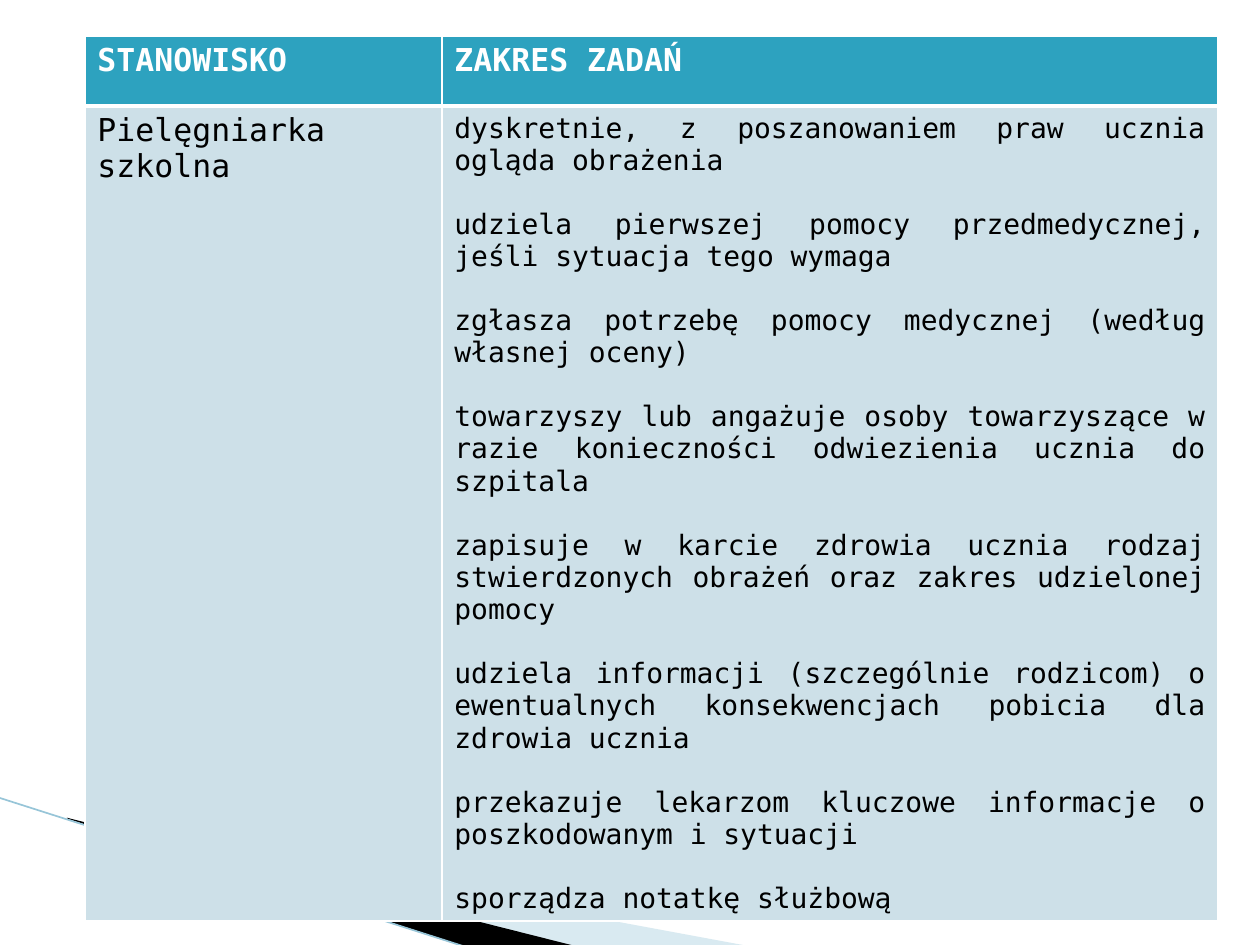
from pptx import Presentation
from pptx.dml.color import RGBColor
from pptx.enum.shapes import MSO_CONNECTOR
from pptx.enum.text import PP_ALIGN
from pptx.oxml.ns import qn
from pptx.util import Pt
from lxml.etree import SubElement

HUES = {"head": "2DA2BF", "body": "CDE0E8", "pale": "A0CBDC",
        "line": "97C5D8", "white": "FFFFFF", "black": "000000"}
FONT = "DejaVu Sans Mono"
TASKS = [
    "dyskretnie, z poszanowaniem praw ucznia ogląda obrażenia",
    "udziela pierwszej pomocy przedmedycznej, jeśli sytuacja tego wymaga",
    "zgłasza potrzebę pomocy medycznej (według własnej oceny)",
    "towarzyszy lub angażuje osoby towarzyszące w razie konieczności odwiezienia ucznia do szpitala",
    "zapisuje w karcie zdrowia ucznia rodzaj stwierdzonych obrażeń oraz zakres udzielonej pomocy",
    "udziela informacji (szczególnie rodzicom) o ewentualnych konsekwencjach pobicia dla zdrowia ucznia",
    "przekazuje lekarzom kluczowe informacje o poszkodowanym i sytuacji",
    "sporządza notatkę służbową",
]


class Deck:
    """Holds the style and the current slide."""

    def __init__(self, wide, high):
        self.show = Presentation()
        self.show.slide_width, self.show.slide_height = Pt(wide), Pt(high)
        self.slide = self.show.slides.add_slide(self.show.slide_layouts[6])

    def hue(self, name):
        return RGBColor.from_string(HUES[name])

    def wedge(self, spots, hue, alpha=100):
        first, *rest = [(Pt(x), Pt(y)) for x, y in spots]
        form = self.slide.shapes.build_freeform(*first)
        form.add_line_segments(rest, close=True)
        shape = form.convert_to_shape()
        shape.shadow.inherit = False
        shape.line.fill.background()
        shape.fill.solid()
        shape.fill.fore_color.rgb = self.hue(hue)
        if alpha < 100:
            tint = shape.fill._xPr.find(".//" + qn("a:srgbClr"))
            SubElement(tint, qn("a:alpha"), val=str(alpha * 1000))

    def line(self, start, end, hue, width):
        ends = [Pt(n) for n in (*start, *end)]
        line = self.slide.shapes.add_connector(MSO_CONNECTOR.STRAIGHT, *ends)
        line.line.color.rgb = self.hue(hue)
        line.line.width = Pt(width)
        SubElement(line._element.spPr, qn("a:effectLst"))

    def table(self, left, top, cols, rows):
        frame = self.slide.shapes.add_table(
            len(rows), len(cols), Pt(left), Pt(top), Pt(sum(cols)), Pt(sum(rows)))
        table = frame.table
        table.horz_banding = False
        for col, wide in zip(table.columns, cols):
            col.width = Pt(wide)
        for row, high in zip(table.rows, rows):
            row.height = Pt(high)
        return table

    def cell(self, cell, texts, fill, hue, edges, size=18, bold=False, align=None, gap=0):
        props = cell._tc.get_or_add_tcPr()
        for side, width in zip("LRTB", edges):
            edge = SubElement(props, qn("a:ln" + side), w=str(Pt(width)))
            paint = SubElement(edge, qn("a:solidFill"))
            SubElement(paint, qn("a:srgbClr"), val=HUES["white"])
        cell.fill.solid()
        cell.fill.fore_color.rgb = self.hue(fill)
        frame = cell.text_frame
        for i, text in enumerate(texts):
            para = frame.add_paragraph() if i else frame.paragraphs[0]
            para.alignment = align
            if i and gap:
                para.space_before = Pt(gap)
            run = para.add_run()
            run.text = text
            font = run.font
            font.name, font.size, font.bold = FONT, Pt(size), bold
            font.color.rgb = self.hue(hue)


def main():
    deck = Deck(720, 540)
    deck.wedge([(39.6, 468.7), (428.4, 540.7), (328.3, 540.7), (39.6, 468)], "pale", 40)
    deck.wedge([(38.2, 467.3), (329, 540.7), (267.8, 541.4), (38.9, 468)], "black")
    deck.line((-0.7, 455.8), (267.1, 541.4), "line", 0.95)
    table = deck.table(48.5, 20.5, (204, 443.5), (40, 464))
    for i, title in enumerate(("STANOWISKO", "ZAKRES ZADAŃ")):
        deck.cell(table.cell(0, i), [title], "head", "white", (1, 1, 1, 3), bold=True)
    edges = (1, 1, 3, 1)
    deck.cell(table.cell(1, 0), ["Pielęgniarka szkolna"], "body", "black", edges)
    deck.cell(table.cell(1, 1), TASKS, "body", "black", edges,
              size=16, align=PP_ALIGN.JUSTIFY, gap=18)
    deck.show.save("out.pptx")


if __name__ == "__main__":
    main()
